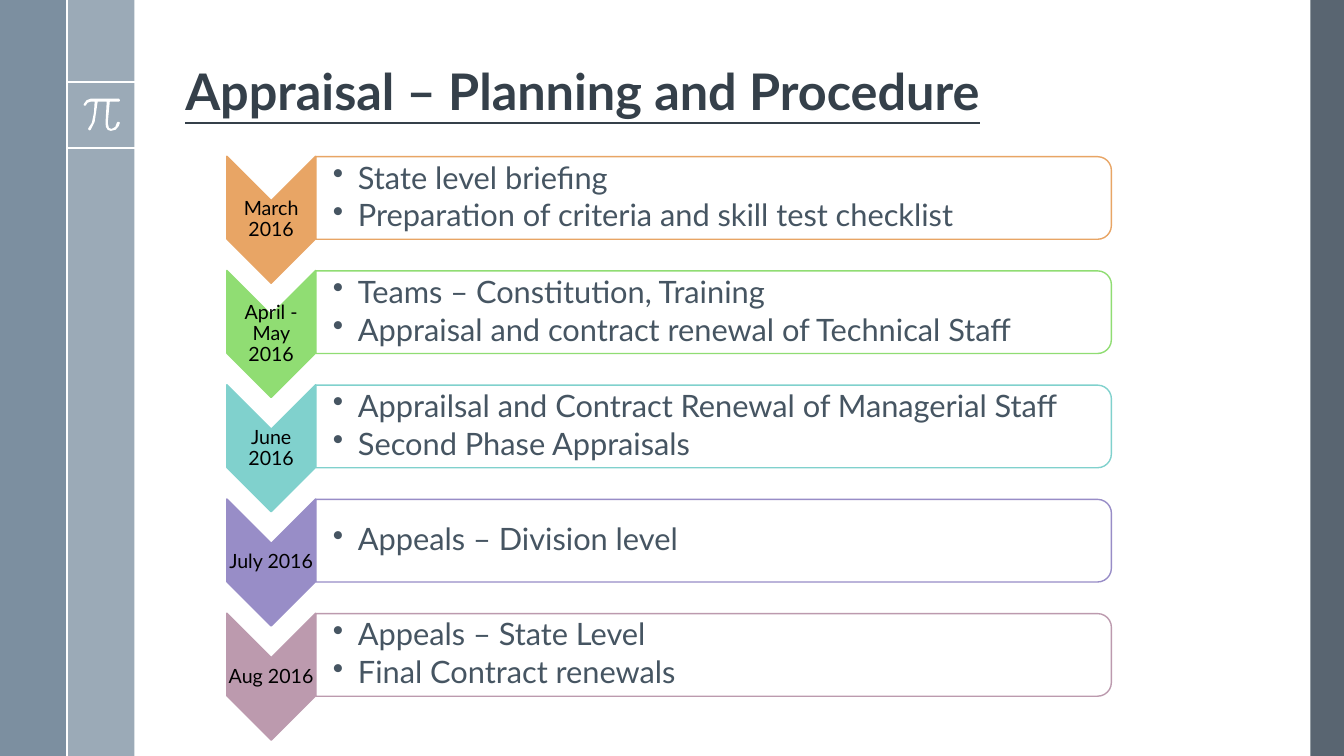
"""Build the appraisal planning and procedure timeline slide."""
from lxml.etree import SubElement
from pptx import Presentation
from pptx.dml.color import RGBColor
from pptx.enum.shapes import MSO_CONNECTOR, MSO_SHAPE
from pptx.enum.text import MSO_ANCHOR, PP_ALIGN
from pptx.oxml.ns import qn
from pptx.util import Pt

WHITE = RGBColor(0xFF, 0xFF, 0xFF)
BLACK = RGBColor(0, 0, 0)
TITLE_COLOR = RGBColor(0x35, 0x40, 0x4A)
TASK_COLOR = RGBColor(0x46, 0x55, 0x62)
SLATE = RGBColor(0x47, 0x55, 0x62)
MIST = RGBColor(0x9B, 0xAA, 0xB7)
STEEL = RGBColor(0x6A, 0x80, 0x93)
ORANGE = RGBColor(0xE8, 0xA5, 0x65)
GREEN = RGBColor(0x90, 0xDD, 0x73)
TEAL = RGBColor(0x80, 0xD1, 0xCD)
PURPLE = RGBColor(0x98, 0x8D, 0xC7)
MAUVE = RGBColor(0xBC, 0x9A, 0xAE)
FONT = "Lato"

TITLE = "Appraisal – Planning and Procedure"
STAGES = [
    ("March 2016", ORANGE, ["State level briefing",
                            "Preparation of criteria and skill test checklist"]),
    ("April - May 2016", GREEN, ["Teams – Constitution, Training",
                                 "Appraisal and contract renewal of Technical Staff"]),
    ("June 2016", TEAL, ["Apprailsal and Contract Renewal of Managerial Staff",
                         "Second Phase Appraisals"]),
    ("July 2016", PURPLE, ["Appeals – Division level"]),
    ("Aug 2016", MAUVE, ["Appeals – State Level", "Final Contract renewals"]),
]
BANDS = [(936, 24, SLATE, 90), (48, 48, MIST, 100), (0, 48, STEEL, 88)]
RULES = [(48, 58.3, 96.5, 58.3), (48, 105.8, 96.5, 105.8), (48, 0, 48, 540)]
PI_OUTLINE = [
    (1180, 980), (900, 980), (860, 995), (835, 1030), (830, 1042), (838, 1050),
    (850, 1050), (870, 1020), (900, 1010), (940, 1010), (933, 1120), (912, 1220),
    (880, 1270), (875, 1280), (880, 1290), (890, 1295), (900, 1290), (940, 1210),
    (970, 1010), (1060, 1010), (1048, 1220), (1052, 1260), (1070, 1290),
    (1100, 1300), (1150, 1287), (1180, 1250), (1190, 1220), (1182, 1210),
    (1168, 1210), (1160, 1220), (1145, 1260), (1110, 1280), (1082, 1272),
    (1070, 1220), (1090, 1010), (1180, 1010), (1190, 1000), (1188, 985)]
PI_UNIT = Pt(0.072)

PITCH = 81.6
CHEVRON_X, CHEVRON_Y, CHEVRON_LENGTH, CHEVRON_WIDTH = 193.7, 157, 90.7, 63.4
PANEL_X, PANEL_Y, PANEL_LENGTH, PANEL_WIDTH = 509.8, 141.4, 59, 568.1


def paint(shape, fill, line=None, opacity=100):
    shape.shadow.inherit = False
    shape.fill.solid()
    shape.fill.fore_color.rgb = fill
    if opacity < 100:
        color = shape.fill._xPr.find(qn("a:solidFill"))[0]
        SubElement(color, qn("a:alpha"), val=str(opacity * 1000))
    if line is None:
        shape.line.fill.background()
    else:
        shape.line.color.rgb = line
        shape.line.width = Pt(1)


def add_turned(shapes, kind, center_x, center_y, width, height, fill, line, opacity=100):
    turned = shapes.add_shape(kind, Pt(center_x - width / 2), Pt(center_y - height / 2),
                              Pt(width), Pt(height))
    turned.rotation = 90
    paint(turned, fill, line, opacity)


def add_text(shapes, box, lines, size, color, insets, anchor=MSO_ANCHOR.MIDDLE,
             align=PP_ALIGN.LEFT, after=0, bullets=False, heading=False):
    frame = shapes.add_textbox(*map(Pt, box)).text_frame
    frame.word_wrap = True
    frame.vertical_anchor = anchor
    (frame.margin_left, frame.margin_top,
     frame.margin_right, frame.margin_bottom) = map(Pt, insets)
    frame.text = "\n".join(lines)
    for paragraph in frame.paragraphs:
        paragraph.alignment = align
        paragraph.line_spacing = 0.9
        paragraph.space_after = Pt(after)
        if bullets:
            properties = paragraph._p.get_or_add_pPr()
            properties.set("marL", str(Pt(18)))
            properties.set("indent", str(-Pt(18)))
            SubElement(properties, qn("a:buChar"), char="•")
        for run in paragraph.runs:
            run.font.name = FONT
            run.font.size = Pt(size)
            run.font.color.rgb = color
            run.font.bold = heading
            run.font.underline = heading


def add_frame(shapes):
    for left, width, color, opacity in BANDS:
        band = shapes.add_shape(MSO_SHAPE.RECTANGLE, Pt(left), 0, Pt(width), Pt(540))
        paint(band, color, opacity=opacity)
    for ends in RULES:
        rule = shapes.add_connector(MSO_CONNECTOR.STRAIGHT, *map(Pt, ends))
        rule.line.color.rgb = WHITE
        rule.line.width = Pt(1.5)
        SubElement(rule._element.spPr, qn("a:effectLst"))
    outline = shapes.build_freeform(*PI_OUTLINE[0], scale=PI_UNIT)
    outline.add_line_segments(PI_OUTLINE[1:], close=True)
    paint(outline.convert_to_shape(), WHITE)


def add_stage(shapes, index, month, color, tasks):
    offset = index * PITCH
    add_turned(shapes, MSO_SHAPE.CHEVRON, CHEVRON_X, CHEVRON_Y + offset,
               CHEVRON_LENGTH, CHEVRON_WIDTH, color, color)
    add_text(shapes, (162, CHEVRON_Y + offset - 13.7, CHEVRON_WIDTH, 27.4), [month],
             14, BLACK, (0.7, 0.7, 0.7, 0.7), align=PP_ALIGN.CENTER, after=4.9)
    add_turned(shapes, MSO_SHAPE.ROUND_2_SAME_RECTANGLE, PANEL_X, PANEL_Y + offset,
               PANEL_LENGTH, PANEL_WIDTH, WHITE, color, 90)
    add_text(shapes, (225.4, PANEL_Y + offset - 26.6, 566, 53.2), tasks,
             22, TASK_COLOR, (12.3, 1.1, 1.1, 1.1), after=3.3, bullets=True)


def main():
    deck = Presentation()
    deck.slide_width, deck.slide_height = Pt(960), Pt(540)
    shapes = deck.slides.add_slide(deck.slide_layouts[6]).shapes
    add_frame(shapes)
    add_text(shapes, (125.3, 13.7, 770.4, 76.3), [TITLE], 36, TITLE_COLOR,
             (7.2, 3.6, 7.2, 3.6), anchor=MSO_ANCHOR.BOTTOM, heading=True)
    for index, (month, color, tasks) in enumerate(STAGES):
        add_stage(shapes, index, month, color, tasks)
    deck.save("out.pptx")


if __name__ == "__main__":
    main()
